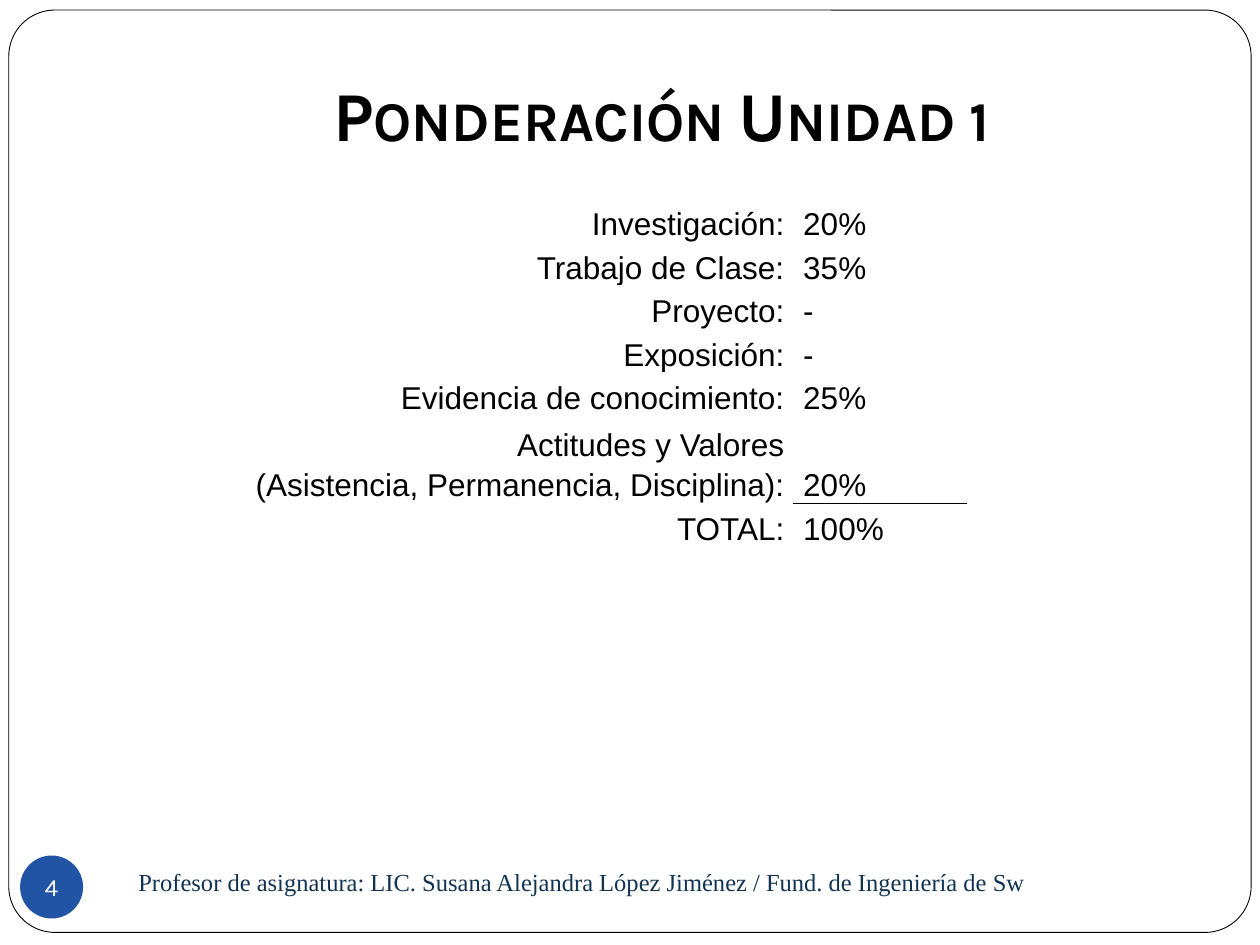
from lxml import etree
from pptx import Presentation
from pptx.dml.color import RGBColor
from pptx.enum import shapes, text
from pptx.oxml.ns import qn
from pptx.util import Pt

BLACK = RGBColor(0x00, 0x00, 0x00)
WHITE = RGBColor(0xFF, 0xFF, 0xFF)
BLUE = RGBColor(0x22, 0x54, 0xA6)
NAVY = RGBColor(0x12, 0x34, 0x52)

TITLE = "Ponderación Unidad 1"
FOOTER = ("Profesor de asignatura: LIC. Susana Alejandra López Jiménez"
          " / Fund. de Ingeniería de Sw")
PAGE = "4"
WEIGHTS = [
    ("Investigación:", "20%"),
    ("Trabajo de Clase:", "35%"),
    ("Proyecto:", "-"),
    ("Exposición:", "-"),
    ("Evidencia de conocimiento:", "25%"),
    ("Actitudes y Valores\n(Asistencia, Permanencia, Disciplina):", "20%"),
    ("TOTAL:", "100%"),
]
COLUMNS = (381.6, 98.64)
LINE_HEIGHT = 23.2
LEFT, CENTER, RIGHT = (text.PP_ALIGN.LEFT, text.PP_ALIGN.CENTER,
                       text.PP_ALIGN.RIGHT)


def write(tf, words, font, size, color, align=LEFT, spacing=None, bold=False):
    tf.text = words
    for p in tf.paragraphs:
        p.alignment = align
        p.line_spacing = spacing
        p.font.name, p.font.size, p.font.bold = font, Pt(size), bold
        p.font.color.rgb = color


def add_shape(slide, kind, box, fill):
    sp = slide.shapes.add_shape(kind, *map(Pt, box))
    sp.shadow.inherit = False
    sp.fill.solid()
    sp.fill.fore_color.rgb = fill
    return sp


def add_text(slide, box, *args, **kwargs):
    tf = slide.shapes.add_textbox(*map(Pt, box)).text_frame
    tf.word_wrap = True
    tf.vertical_anchor = text.MSO_ANCHOR.MIDDLE
    write(tf, *args, **kwargs)
    return tf


def add_border(cell, side):
    """Draw a 1 pt black line on one side: lnT or lnB."""
    tcPr = cell._tc.get_or_add_tcPr()
    ln = etree.Element(qn(f"a:{side}"), w=str(Pt(1)))
    fill = etree.SubElement(ln, qn("a:solidFill"))
    etree.SubElement(fill, qn("a:srgbClr"), val=str(BLACK))
    tcPr.insert(0, ln)


def add_weights(slide):
    frame = slide.shapes.add_table(
        len(WEIGHTS), len(COLUMNS), Pt(72), Pt(113.76),
        Pt(sum(COLUMNS)), Pt(LINE_HEIGHT * (len(WEIGHTS) + 1)))
    table = frame.table
    table.first_row = table.horz_banding = False
    for column, width in zip(table.columns, COLUMNS):
        column.width = Pt(width)
    for i, row in enumerate(WEIGHTS):
        table.rows[i].height = Pt(LINE_HEIGHT * (row[0].count("\n") + 1))
        for j, (words, align) in enumerate(zip(row, (RIGHT, LEFT))):
            cell = table.cell(i, j)
            cell.fill.background()
            cell.margin_left = cell.margin_right = Pt(5.4)
            cell.margin_top = cell.margin_bottom = 0
            cell.vertical_anchor = text.MSO_ANCHOR.BOTTOM
            write(cell.text_frame, words, "Arial", 18, BLACK, align, 1.15)
    last = len(WEIGHTS) - 1
    add_border(table.cell(last - 1, 1), "lnB")
    add_border(table.cell(last, 1), "lnT")


def main():
    prs = Presentation()
    prs.slide_width, prs.slide_height = Pt(720), Pt(540)
    slide = prs.slides.add_slide(prs.slide_layouts[6])

    frame = add_shape(slide, shapes.MSO_SHAPE.ROUNDED_RECTANGLE,
                      (5.04, 5.76, 709.92, 527.04), WHITE)
    frame.adjustments[0] = 0.05
    frame.line.color.rgb = BLACK
    frame.line.width = Pt(0.5)

    title = add_text(slide, (72, 21.6, 612, 90), TITLE, "Karla", 40, BLACK,
                     CENTER, bold=True)
    title.margin_bottom = Pt(7.2)
    title.paragraphs[0].runs[0]._r.get_or_add_rPr().set("cap", "small")

    add_text(slide, (72, 486, 527.76, 36), FOOTER, "Times New Roman", 14, NAVY)

    badge = add_shape(slide, shapes.MSO_SHAPE.OVAL, (11.52, 488.88, 36, 36),
                      BLUE)
    badge.line.fill.background()
    tf = badge.text_frame
    tf.margin_left = tf.margin_right = tf.margin_top = tf.margin_bottom = 0
    tf.word_wrap = False
    tf.vertical_anchor = text.MSO_ANCHOR.MIDDLE
    write(tf, PAGE, "Karla", 14, WHITE, CENTER)

    add_weights(slide)
    prs.save("out.pptx")


if __name__ == "__main__":
    main()
